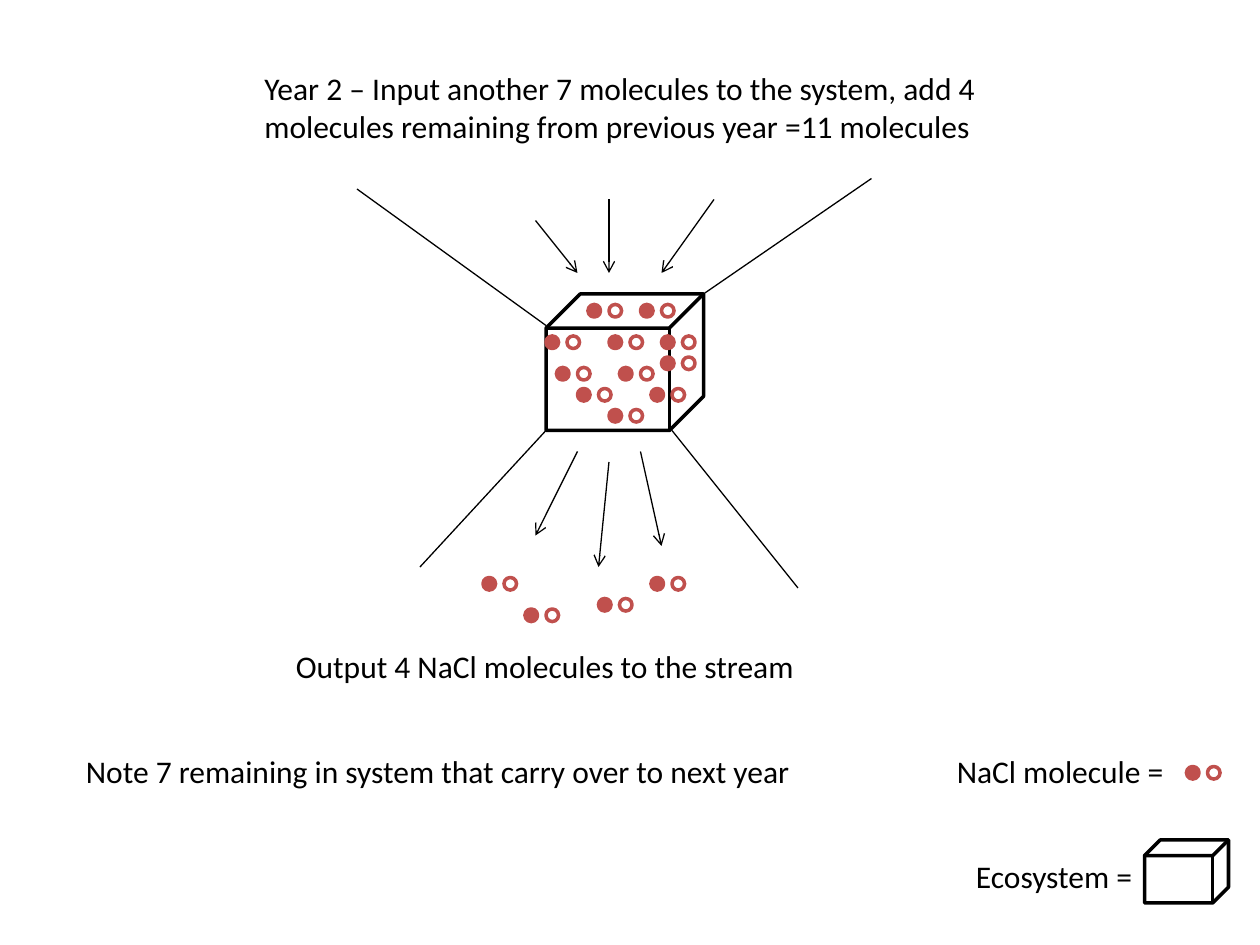
"""Build the slide on salt input and output of an ecosystem in year 2."""
from lxml import etree
from pptx import Presentation
from pptx import util as u
from pptx.dml.color import RGBColor
from pptx.enum import shapes, text
from pptx.oxml import ns

PX = u.Inches(1) // 120
BLACK = RGBColor(0x00, 0x00, 0x00)
SALT_RED = RGBColor(0xC0, 0x50, 0x4D)


def add_outline(parent, kind, left, top, width, height, color):
    outline = parent.shapes.add_shape(
        kind, left * PX, top * PX, width * PX, height * PX)
    outline.shadow.inherit = False
    outline.fill.background()
    outline.line.color.rgb = color
    outline.line.width = u.Pt(2)
    return outline


def add_label(parent, words, left, top, width, height, align):
    label = parent.shapes.add_textbox(
        left * PX, top * PX, width * PX, height * PX)
    frame = label.text_frame
    frame.word_wrap = True
    frame.auto_size = text.MSO_AUTO_SIZE.SHAPE_TO_FIT_TEXT
    frame.paragraphs[0].alignment = align
    run = frame.paragraphs[0].add_run()
    run.text = words
    run.font.name = "Calibri"
    run.font.size = u.Pt(18)
    run.font.color.rgb = BLACK


prs = Presentation()
prs.slide_width = 1200 * PX
prs.slide_height = 900 * PX
slide = prs.slides.add_slide(prs.slide_layouts[6])

add_outline(slide, shapes.MSO_SHAPE.CUBE, 520, 280, 150, 130, BLACK)

boundaries = [
    (520, 410, 400, 540), (640, 410, 760, 560),
    (520, 310, 340, 180), (670, 280, 830, 170),
]
flows = [
    (510, 210, 550, 260), (580, 190, 580, 260), (680, 190, 630, 260),
    (550, 430, 510, 510), (610, 430, 630, 520), (580, 440, 570, 540),
]
for ends in boundaries + flows:
    connector = slide.shapes.add_connector(
        shapes.MSO_CONNECTOR.STRAIGHT, *(end * PX for end in ends))
    connector.line.color.rgb = BLACK
    connector.line.width = u.Pt(0.75)
    properties = connector._element.spPr
    if ends in flows:
        etree.SubElement(
            properties.find(ns.qn("a:ln")), ns.qn("a:tailEnd"), type="arrow")
    etree.SubElement(properties, ns.qn("a:effectLst"))

stored = [
    (520, 320), (530, 350), (580, 320), (590, 350), (560, 290), (630, 320),
    (610, 290), (550, 370), (580, 390), (620, 370), (630, 340),
]
released = [(460, 550), (570, 570), (620, 550), (500, 580)]
legend = [(1130, 730)]
for left, top in stored + released + legend:
    molecule = slide.shapes.add_group_shape()
    sodium, chloride = [
        add_outline(molecule, shapes.MSO_SHAPE.OVAL, x, top, 12, 12, SALT_RED)
        for x in (left, left + 20)]
    sodium.fill.solid()
    sodium.fill.fore_color.rgb = SALT_RED
add_label(molecule, "NaCl molecule =", 870, 710, 250, 48, text.PP_ALIGN.RIGHT)

ecosystem = slide.shapes.add_group_shape()
add_outline(ecosystem, shapes.MSO_SHAPE.CUBE, 1090, 800, 80, 60, BLACK)
add_label(ecosystem, "Ecosystem =", 910, 810, 180, 48, text.PP_ALIGN.RIGHT)

for words, left, top, width, height in [
    ("Year 2 – Input another 7 molecules to the system, add 4 molecules "
     "remaining from previous year =11 molecules", 240, 60, 740, 85),
    ("Output 4 NaCl molecules to the stream", 270, 610, 550, 48),
    ("Note 7 remaining in system that carry over to next year",
     70, 710, 740, 48),
]:
    add_label(slide, words, left, top, width, height, text.PP_ALIGN.LEFT)

prs.save("out.pptx")
